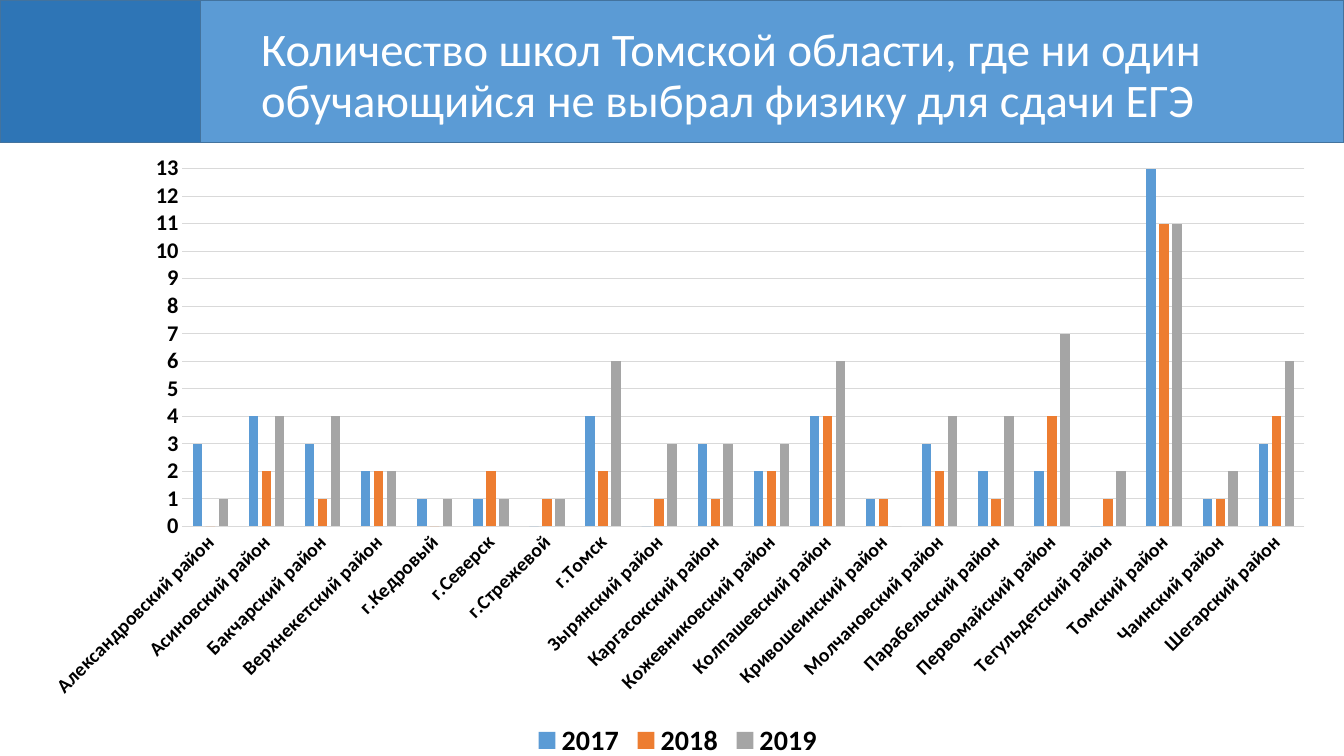
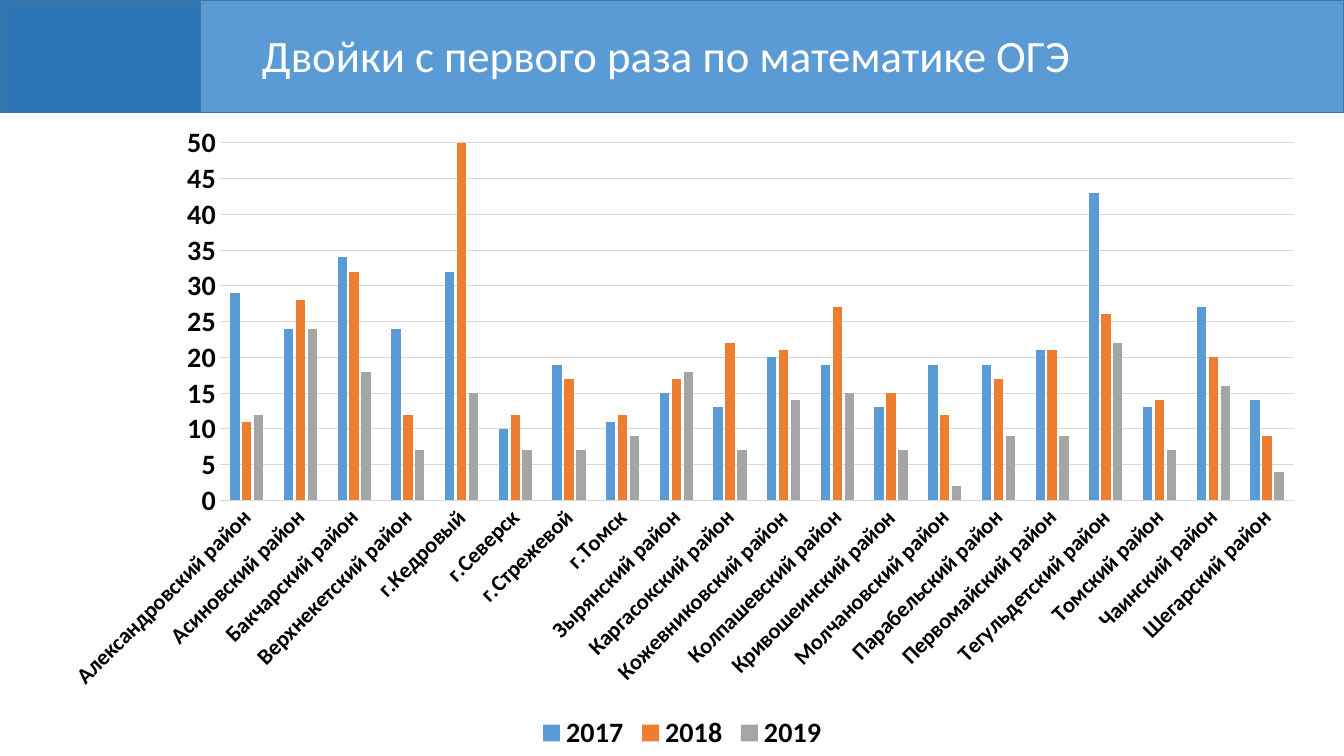
from pptx import Presentation
from pptx.chart.data import CategoryChartData
from pptx.dml.color import RGBColor
from pptx.enum.chart import XL_CHART_TYPE, XL_LEGEND_POSITION, XL_TICK_MARK
from pptx.enum.shapes import MSO_SHAPE
from pptx.oxml.ns import qn
from pptx.util import Pt

FACE = "Calibri"
BLUE = RGBColor(0x5B, 0x9B, 0xD5)
DEEP = RGBColor(0x2E, 0x75, 0xB6)
EDGE = RGBColor(0x43, 0x73, 0x9E)
ORANGE = RGBColor(0xED, 0x7D, 0x31)
GRAY = RGBColor(0xA5, 0xA5, 0xA5)
GRID = RGBColor(0xD9, 0xD9, 0xD9)
WHITE = RGBColor(0xFF, 0xFF, 0xFF)
BLACK = RGBColor(0, 0, 0)

WIDE, HIGH = 960, 540
SPLIT = 143.3
YEARS = {"2017": BLUE, "2018": ORANGE, "2019": GRAY}
AREAS = [
    "Александровский район", "Асиновский район", "Бакчарский район",
    "Верхнекетский район", "г.Кедровый", "г.Северск", "г.Стрежевой",
    "г.Томск", "Зырянский район", "Каргасокский район",
    "Кожевниковский район", "Колпашевский район", "Кривошеинский район",
    "Молчановский район", "Парабельский район", "Первомайский район",
    "Тегульдетский район", "Томский район", "Чаинский район",
    "Шегарский район",
]

# Boxes are left, top, width, height in points.
SLIDES = [
    {
        "title": "Количество школ Томской области, где ни один "
                 "обучающийся не выбрал физику для сдачи ЕГЭ",
        "size": 33.3, "box": (179.4, 15.4, 687, 84), "band": 101.8,
        "chart": (18, 101.8, 932.4, 443.5),
        "top": 13, "step": 1, "lap": -37, "names": 14, "marks": 16,
        "rows": [
            [3, 4, 3, 2, 1, 1, 0, 4, 0, 3, 2, 4, 1, 3, 2, 2, 0, 13, 1, 3],
            [0, 2, 1, 2, 0, 2, 1, 2, 1, 1, 2, 4, 1, 2, 1, 4, 1, 11, 1, 4],
            [1, 4, 4, 2, 1, 1, 1, 6, 3, 3, 3, 6, 0, 4, 4, 7, 2, 11, 2, 6],
        ],
    },
    {
        "title": "Двойки с первого раза по математике ОГЭ",
        "size": 32, "box": (180, 20.4, 763, 84), "band": 80.5,
        "chart": (32.4, 80.5, 910, 459.5),
        "top": 50, "step": 5, "lap": -27, "names": 16, "marks": 20,
        "rows": [
            [29, 24, 34, 24, 32, 10, 19, 11, 15, 13,
             20, 19, 13, 19, 19, 21, 43, 13, 27, 14],
            [11, 28, 32, 12, 50, 12, 17, 12, 17, 22,
             21, 27, 15, 12, 17, 21, 26, 14, 20, 9],
            [12, 24, 18, 7, 15, 7, 7, 9, 18, 7,
             14, 15, 7, 2, 9, 9, 22, 7, 16, 4],
        ],
    },
]


def style(font, size, color, bold=False):
    font.name, font.size, font.bold = FACE, Pt(size), bold
    font.color.rgb = color


def block(slide, left, width, height, color):
    """Draw one part of the header band."""
    rect = slide.shapes.add_shape(
        MSO_SHAPE.RECTANGLE, Pt(left), 0, Pt(width), Pt(height))
    rect.shadow.inherit = False
    rect.fill.solid()
    rect.fill.fore_color.rgb = color
    rect.line.color.rgb = EDGE
    rect.line.width = Pt(1)


deck = Presentation()
deck.slide_width, deck.slide_height = Pt(WIDE), Pt(HIGH)

for item in SLIDES:
    slide = deck.slides.add_slide(deck.slide_layouts[6])

    # Header
    block(slide, SPLIT, WIDE - SPLIT, item["band"], BLUE)
    box = slide.shapes.add_textbox(*map(Pt, item["box"]))
    box.text_frame.word_wrap = True
    box.text_frame.text = item["title"]
    title = box.text_frame.paragraphs[0]
    title.line_spacing = 0.9
    style(title.runs[0].font, item["size"], WHITE)
    block(slide, 0, SPLIT, item["band"], DEEP)

    # Chart
    data = CategoryChartData()
    data.categories = AREAS
    for year, row in zip(YEARS, item["rows"]):
        data.add_series(year, row)
    chart = slide.shapes.add_chart(
        XL_CHART_TYPE.COLUMN_CLUSTERED, *map(Pt, item["chart"]), data).chart
    style(chart.font, 10, BLACK)
    chart.has_title = False
    chart.has_legend = True
    chart.legend.position = XL_LEGEND_POSITION.BOTTOM
    chart.legend.include_in_layout = False
    style(chart.legend.font, 20, BLACK, True)

    plot = chart.plots[0]
    plot.vary_by_categories = False
    plot.gap_width, plot.overlap = 219, item["lap"]
    for series, color in zip(plot.series, YEARS.values()):
        series.format.fill.solid()
        series.format.fill.fore_color.rgb = color

    # Axes
    names, marks = chart.category_axis, chart.value_axis
    for axis, size in (names, item["names"]), (marks, item["marks"]):
        axis.major_tick_mark = axis.minor_tick_mark = XL_TICK_MARK.NONE
        style(axis.tick_labels.font, size, BLACK, True)
    marks.minimum_scale, marks.maximum_scale = 0, item["top"]
    marks.major_unit = item["step"]
    marks.format.line.fill.background()
    for line in names.format.line, marks.major_gridlines.format.line:
        line.color.rgb = GRID
        line.width = Pt(0.75)
    # Slant the category labels by 45 degrees
    names._element.find(qn("c:txPr")).find(qn("a:bodyPr")).set("rot", "-2700000")

deck.save("out.pptx")
